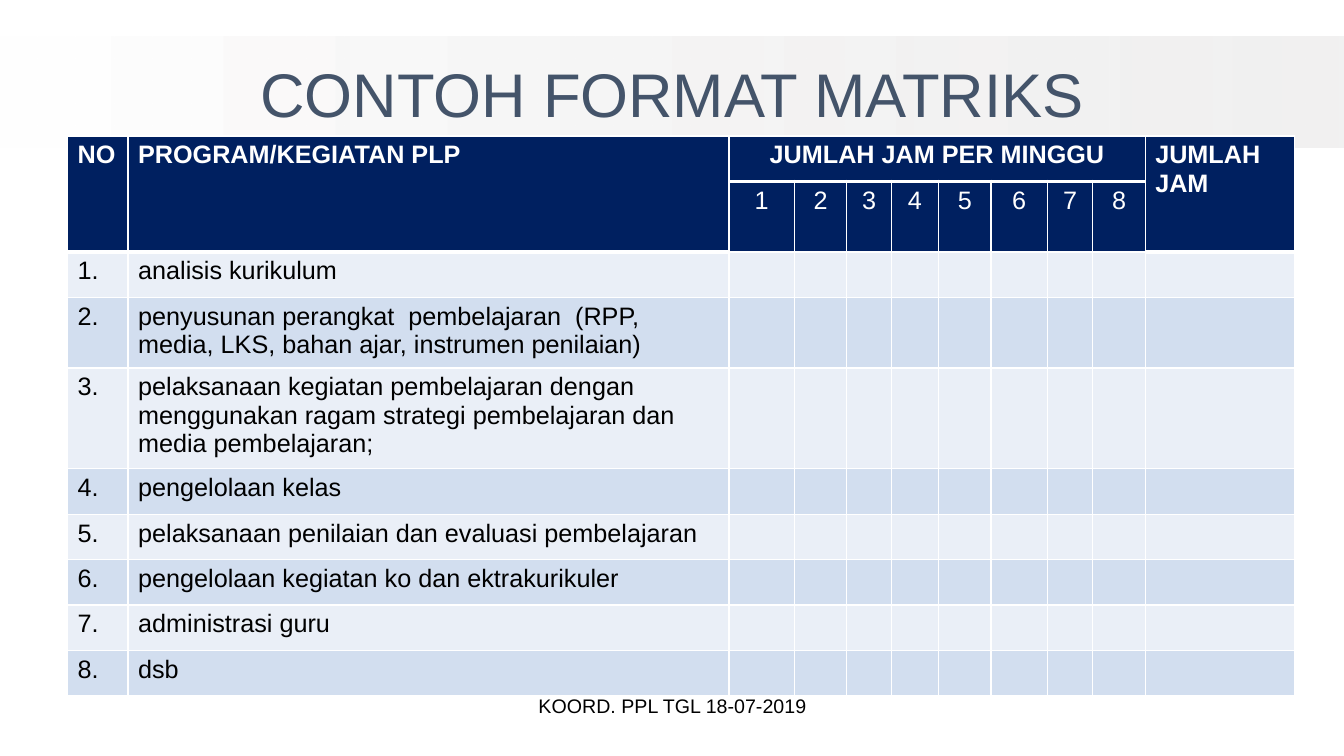
from lxml.etree import SubElement
from pptx import Presentation
from pptx.dml.color import RGBColor as Rgb
from pptx.enum.shapes import MSO_SHAPE as Shape
from pptx.enum.text import MSO_ANCHOR as Anchor, PP_ALIGN as Align
from pptx.oxml.ns import qn
from pptx.util import Inches, Pt

COLORS = {
    "white": "FFFFFF", "black": "000000", "slate": "44546A", "navy": "002060",
    "band": "E7E6E6", "odd": "EAEFF7", "even": "D2DEEF",
}
COLUMN_WIDTHS = [0.6, 5.96, 0.65, 0.52, 0.44, 0.47, 0.52, 0.56, 0.45, 0.52, 1.48]
ROW_HEIGHTS = [0.45, 0.65, 0.45, 0.65, 0.94] + [0.45] * 5
FIRST_WEEK, WEEKS = 2, 8
TOTAL = FIRST_WEEK + WEEKS
ACTIVITIES = [
    "analisis kurikulum",
    "penyusunan perangkat  pembelajaran  (RPP,  media, LKS, bahan ajar, instrumen penilaian)",
    "pelaksanaan kegiatan pembelajaran dengan menggunakan ragam strategi "
    "pembelajaran dan media pembelajaran;",
    "pengelolaan kelas",
    "pelaksanaan penilaian dan evaluasi pembelajaran",
    "pengelolaan kegiatan ko dan ektrakurikuler",
    "administrasi guru",
    "dsb",
]


def color(name):
    return Rgb.from_string(COLORS[name])


def write(frame, text, size=18, ink="black", bold=False, align=Align.LEFT, anchor=Anchor.TOP):
    frame.word_wrap = True
    frame.vertical_anchor = anchor
    para = frame.paragraphs[0]
    para.alignment = align
    span = para.add_run()
    span.text = text
    span.font.name = "Arial"
    span.font.size = Pt(size)
    span.font.bold = bold
    span.font.color.rgb = color(ink)


def header_rule_row(column):
    """Row whose lower edge carries the heavy header rule."""
    return 0 if FIRST_WEEK <= column < TOTAL else 1


def add_borders(cell, top, bottom):
    properties = cell._tc.get_or_add_tcPr()
    for side, width in (("L", 1), ("R", 1), ("T", top), ("B", bottom)):
        line = SubElement(properties, qn(f"a:ln{side}"), w=str(Pt(width)))
        SubElement(SubElement(line, qn("a:solidFill")), qn("a:srgbClr"), val=COLORS["white"])


class MatrixSlide:
    def __init__(self, deck):
        self.page = deck.slides.add_slide(deck.slide_layouts[5])

    def place(self, box, left, top, width, height):
        box.left, box.top = Inches(left), Inches(top)
        box.width, box.height = Inches(width), Inches(height)

    def title(self, text, *position):
        box = self.page.shapes.title
        self.place(box, *position)
        write(box.text_frame, text, size=44, ink="slate", align=Align.CENTER, anchor=Anchor.MIDDLE)

    def band(self, *position):
        box = self.page.shapes.add_shape(Shape.RECTANGLE, *map(Inches, position))
        box.shadow.inherit = False
        box.line.fill.background()
        box.fill.gradient()
        box.fill.gradient_angle = 0
        for stop, name in zip(box.fill.gradient_stops, ("white", "band")):
            stop.color.rgb = color(name)
        last = list(box._element.spPr.iter(qn("a:srgbClr")))[-1]
        SubElement(last, qn("a:alpha"), val="54000")
        # Send the band behind the title
        box._element.getparent().insert(2, box._element)

    def caption(self, text, *position):
        box = self.page.shapes.add_textbox(*map(Inches, position))
        write(box.text_frame, text, size=14, align=Align.CENTER)

    def matrix(self, left, top):
        table = self.page.shapes.add_table(
            len(ROW_HEIGHTS), len(COLUMN_WIDTHS), Inches(left), Inches(top),
            Inches(sum(COLUMN_WIDTHS)), Inches(sum(ROW_HEIGHTS))).table
        table.first_row = table.horz_banding = False
        for column, width in zip(table.columns, COLUMN_WIDTHS):
            column.width = Inches(width)
        for row, height in zip(table.rows, ROW_HEIGHTS):
            row.height = Inches(height)

        # Fills and rules
        for row in range(len(ROW_HEIGHTS)):
            fill = "navy" if row < 2 else ("odd", "even")[row % 2]
            for column in range(len(COLUMN_WIDTHS)):
                cell = table.cell(row, column)
                rule = header_rule_row(column)
                add_borders(cell, 3 if row - 1 == rule else 1, 3 if row == rule else 1)
                cell.fill.solid()
                cell.fill.fore_color.rgb = color(fill)

        # Two-level header
        for column, text in ((0, "NO"), (1, "PROGRAM/KEGIATAN PLP"), (TOTAL, "JUMLAH JAM")):
            table.cell(0, column).merge(table.cell(1, column))
            write(table.cell(0, column).text_frame, text, ink="white", bold=True)
        weeks = table.cell(0, FIRST_WEEK)
        weeks.merge(table.cell(0, TOTAL - 1))
        write(weeks.text_frame, "JUMLAH JAM PER MINGGU", ink="white", bold=True, align=Align.CENTER)
        for week in range(WEEKS):
            write(table.cell(1, FIRST_WEEK + week).text_frame, str(week + 1),
                  ink="white", align=Align.CENTER)

        # Numbered activities
        for number, activity in enumerate(ACTIVITIES, 1):
            write(table.cell(number + 1, 0).text_frame, f"{number}.")
            write(table.cell(number + 1, 1).text_frame, activity)


def main():
    deck = Presentation()
    deck.slide_width, deck.slide_height = Inches(13.33), Inches(7.5)
    slide = MatrixSlide(deck)
    slide.band(0, 0.36, 13.33, 1.1)
    slide.title("CONTOH FORMAT MATRIKS", 0.67, 0.3, 12, 1.25)
    slide.caption("KOORD. PPL TGL 18-07-2019", 4.56, 6.83, 4.22, 0.52)
    slide.matrix(0.67, 1.35)
    deck.save("out.pptx")


if __name__ == "__main__":
    main()
